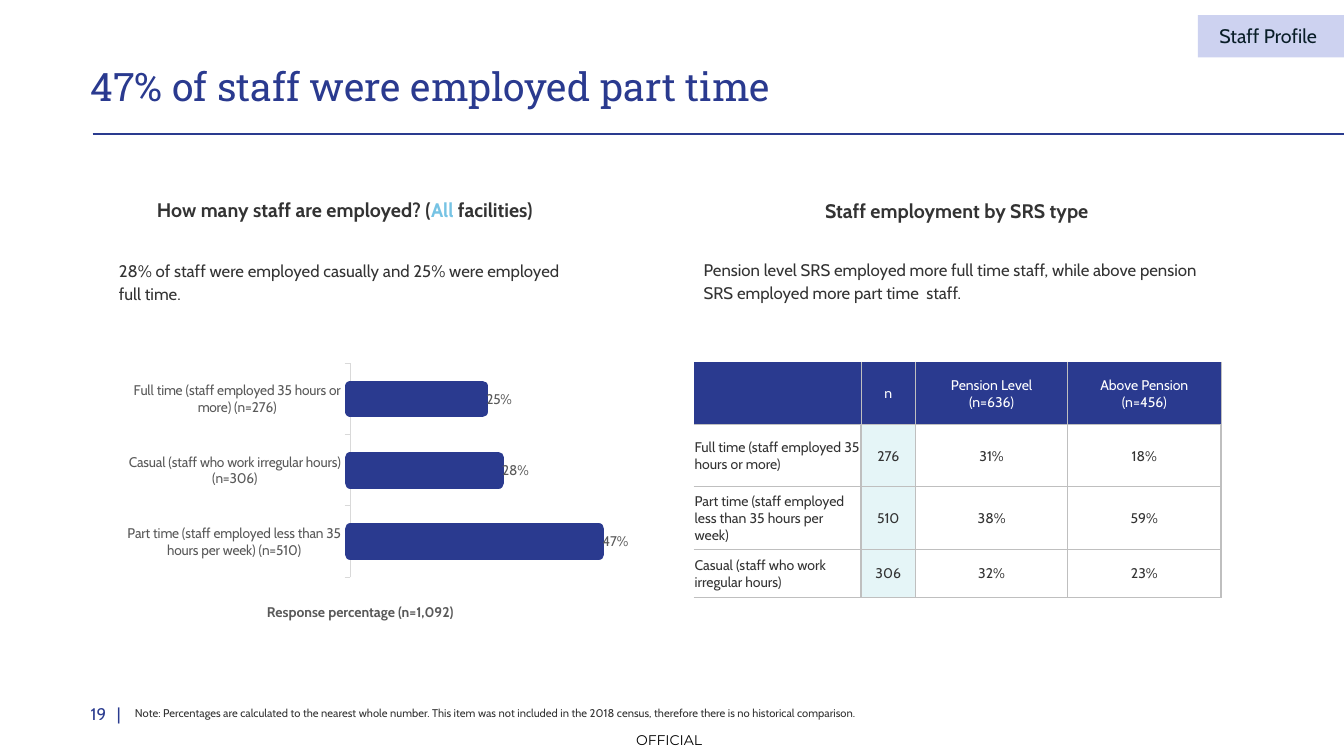
import lxml.etree
import pptx
import pptx.chart.data
import pptx.dml.color
import pptx.enum.chart
import pptx.enum.shapes
import pptx.enum.text
import pptx.oxml
import pptx.oxml.ns
import pptx.util
from pptx.util import Inches

RGBColor = pptx.dml.color.RGBColor
NAVY = RGBColor(0x2A, 0x3A, 0x8F)
RULE_BLUE = RGBColor(0x2A, 0x3B, 0x8F)
LAVENDER = RGBColor(0xCD, 0xD2, 0xF0)
INK = RGBColor(0x08, 0x1D, 0x27)
BLACK = RGBColor(0, 0, 0)
CHARCOAL = RGBColor(0x33, 0x33, 0x33)
GREY = RGBColor(0x59, 0x59, 0x59)
AXIS_GREY = RGBColor(0xD9, 0xD9, 0xD9)
BORDER_GREY = RGBColor(0xBF, 0xBF, 0xBF)
SKY = RGBColor(0x76, 0xC3, 0xE4)
PALE_TEAL = RGBColor(0xE5, 0xF5, 0xF7)
WHITE = RGBColor(0xFF, 0xFF, 0xFF)

LEFT = pptx.enum.text.PP_ALIGN.LEFT
CENTER = pptx.enum.text.PP_ALIGN.CENTER
RIGHT = pptx.enum.text.PP_ALIGN.RIGHT
TOP = pptx.enum.text.MSO_ANCHOR.TOP
MIDDLE = pptx.enum.text.MSO_ANCHOR.MIDDLE
BOTTOM = pptx.enum.text.MSO_ANCHOR.BOTTOM

CHART_ROWS = [
    ("Part time (staff employed less than 35 hours per week) (n=510)", 0.47),
    ("Casual (staff who work irregular hours) (n=306)", 0.28),
    ("Full time (staff employed 35 hours or more) (n=276)", 0.25),
]
TABLE_ROWS = [
    ("", "n", "Pension Level\v(n=636)", "Above Pension\n(n=456)"),
    ("Full time (staff employed 35 hours or more)", "276", "31%", "18%"),
    ("Part time (staff employed less than 35 hours per week)", "510", "38%", "59%"),
    ("Casual (staff who work irregular hours)", "306", "32%", "23%"),
]
COLUMN_WIDTHS = (1.66, 0.54, 1.51, 1.52)
ROW_HEIGHTS = (0.62, 0.62, 0.62, 0.48)


def style_font(font, size, color, name="Cabin", bold=False):
    """Set the face, size, colour and weight of a font."""
    font.name = name
    font.size = pptx.util.Pt(size)
    font.bold = bold
    font.color.rgb = color


def write_text(frame, runs, size, color, name="Cabin", bold=False, align=LEFT,
               anchor=TOP, body=False):
    """Write one paragraph; a run is a string or a (string, colour) pair."""
    frame.word_wrap = True
    frame.vertical_anchor = anchor
    paragraph = frame.paragraphs[0]
    paragraph.alignment = align
    if body:
        paragraph.line_spacing = 1.14
        paragraph.space_before = pptx.util.Pt(10)
    style_font(paragraph.font, size, color, name, bold)
    for item in runs:
        text, run_color = item if isinstance(item, tuple) else (item, None)
        run = paragraph.add_run()
        run.text = text
        if run_color is not None:
            run.font.color.rgb = run_color
    return paragraph


def add_text(slide, box, runs, size, color, **options):
    """Add a text box and return its paragraph."""
    shape = slide.shapes.add_textbox(*map(Inches, box))
    return write_text(shape.text_frame, runs, size, color, **options)


def add_block(slide, box, color):
    """Add a plain rectangle without outline or shadow."""
    shape = slide.shapes.add_shape(
        pptx.enum.shapes.MSO_SHAPE.RECTANGLE, *map(Inches, box))
    shape.shadow.inherit = False
    shape.fill.solid()
    shape.fill.fore_color.rgb = color
    shape.line.fill.background()
    return shape


def add_header(slide, left, top, width):
    """Place the title, its rule and the section tag."""
    right = left + width
    rule = slide.shapes.add_connector(
        pptx.enum.shapes.MSO_CONNECTOR.STRAIGHT,
        Inches(left + 0.12), Inches(top + 0.92), Inches(right), Inches(top + 0.92))
    rule.line.color.rgb = RULE_BLUE
    rule.line.width = pptx.util.Pt(1.5)
    lxml.etree.SubElement(rule.element.spPr, pptx.oxml.ns.qn("a:effectLst"))
    add_text(slide, (left, top, 12.13, 0.72), ["47% of staff were employed part time"],
             28, NAVY, name="Roboto Slab", anchor=BOTTOM)
    add_block(slide, (right - 1.45, top - 0.26, 1.45, 0.42), LAVENDER)
    add_text(slide, (right - 1.76, top - 0.22, 1.59, 0.34), ["Staff Profile"],
             14, INK, align=RIGHT)


def add_footer(slide, left, top):
    """Place the page number, the note and the classification."""
    number = add_text(slide, (left, top, 0.59, 0.4), ["19\t|"], 12, RULE_BLUE, anchor=MIDDLE)
    stops = pptx.oxml.parse_xml(
        f'<a:tabLst {pptx.oxml.ns.nsdecls("a")}><a:tab pos="{Inches(0.26)}" algn="l"/></a:tabLst>')
    number.font._element.addprevious(stops)
    add_text(slide, (left + 0.44, top + 0.08, 8.93, 0.37),
             ["Note: Percentages are calculated to the nearest whole number. This item was "
              "not included in the 2018 census, therefore there is no historical comparison."],
             8, CHARCOAL)
    shape = slide.shapes.add_textbox(*map(Inches, (left + 5.51, top + 0.38, 0.76, 0.17)))
    frame = shape.text_frame
    frame.margin_left = frame.margin_right = frame.margin_top = frame.margin_bottom = 0
    write_text(frame, ["OFFICIAL"], 10, BLACK, name="Montserrat")


def fix_plot_area(chart, **layout):
    """Pin the inner plot area to fractions of the chart."""
    values = "".join(f'<c:{key} val="{value}"/>' for key, value in layout.items())
    area = chart._chartSpace.chart.plotArea
    for old in area.findall(pptx.oxml.ns.qn("c:layout")):
        area.remove(old)
    area.insert(0, pptx.oxml.parse_xml(
        f'<c:layout {pptx.oxml.ns.nsdecls("c")}><c:manualLayout><c:layoutTarget val="inner"/>'
        f'<c:xMode val="edge"/><c:yMode val="edge"/>{values}</c:manualLayout></c:layout>'))


def add_employment_chart(slide, left, top, width, height):
    """Place the bar chart of employment types and its axis caption."""
    data = pptx.chart.data.CategoryChartData(number_format="0%")
    data.categories = [label for label, _ in CHART_ROWS]
    data.add_series("Series 1", [value for _, value in CHART_ROWS])
    chart = slide.shapes.add_chart(
        pptx.enum.chart.XL_CHART_TYPE.BAR_CLUSTERED,
        *map(Inches, (left, top, width, height)), data).chart
    chart.has_legend = False
    chart.has_title = False
    style_font(chart.font, 10, BLACK)
    fix_plot_area(chart, x=0.471, y=0.087, w=0.529, h=0.827)

    categories = chart.category_axis
    categories.major_tick_mark = pptx.enum.chart.XL_TICK_MARK.OUTSIDE
    categories.format.line.color.rgb = AXIS_GREY
    categories.format.line.width = pptx.util.Pt(0.75)
    style_font(categories.tick_labels.font, 10, GREY)
    values = chart.value_axis
    values.minimum_scale, values.maximum_scale = 0, 0.5
    values.has_major_gridlines = False
    values.visible = False

    plot = chart.plots[0]
    plot.gap_width = 182
    plot.vary_by_categories = False
    bars = plot.series[0].format
    bars.fill.solid()
    bars.fill.fore_color.rgb = NAVY
    bars.line.color.rgb = NAVY
    bars.line.width = pptx.util.Pt(8.25)
    lxml.etree.SubElement(bars.line._ln, pptx.oxml.ns.qn("a:round"))
    plot.has_data_labels = True
    labels = plot.data_labels
    labels.show_value = True
    labels.number_format, labels.number_format_is_linked = "0%", False
    labels.position = pptx.enum.chart.XL_LABEL_POSITION.OUTSIDE_END
    style_font(labels.font, 10, GREY)

    caption = add_block(slide, (left + 1.41, top + 2.53, 2.87, 0.22), WHITE)
    write_text(caption.text_frame, ["Response percentage (n=1,092)"], 10, GREY,
               bold=True, body=True)


def set_border(cell, side, width):
    """Draw one cell edge, or clear it when the width is zero."""
    paint = (f'<a:solidFill><a:srgbClr val="{BORDER_GREY}"/></a:solidFill>'
             if width else "<a:noFill/>")
    cell._tc.get_or_add_tcPr().append(pptx.oxml.parse_xml(
        f'<a:ln{side} {pptx.oxml.ns.nsdecls("a")} w="{pptx.util.Pt(width)}">{paint}</a:ln{side}>'))


def add_type_table(slide, left, top):
    """Place the table of employment by SRS type."""
    table = slide.shapes.add_table(
        len(ROW_HEIGHTS), len(COLUMN_WIDTHS), Inches(left), Inches(top),
        Inches(sum(COLUMN_WIDTHS)), Inches(sum(ROW_HEIGHTS))).table
    table.first_row = table.horz_banding = False
    for column, width in zip(table.columns, COLUMN_WIDTHS):
        column.width = Inches(width)
    for row_index, texts in enumerate(TABLE_ROWS):
        table.rows[row_index].height = Inches(ROW_HEIGHTS[row_index])
        is_header = row_index == 0
        line = 0.5 if is_header else 1
        for column_index, text in enumerate(texts):
            cell = table.cell(row_index, column_index)
            set_border(cell, "L", line if column_index else 0)
            set_border(cell, "R", line)
            set_border(cell, "T", (0, 0.5, 1, 1)[row_index])
            set_border(cell, "B", line)
            cell.fill.solid()
            cell.fill.fore_color.rgb = (
                NAVY if is_header else PALE_TEAL if column_index == 1 else WHITE)
            cell.margin_left = cell.margin_right = cell.margin_top = Inches(0.01)
            cell.margin_bottom = 0
            cell.vertical_anchor = MIDDLE
            cell.text = text
            for paragraph in cell.text_frame.paragraphs:
                paragraph.alignment = CENTER if column_index else LEFT
                style_font(paragraph.font, 10, WHITE if is_header else CHARCOAL)


def add_all_facilities(slide, left, top):
    """Place the left column about all facilities."""
    add_text(slide, (left, top, 4.56, 0.41),
             ["How many staff are employed? (", ("All", SKY), " facilities)"],
             14, CHARCOAL, bold=True, align=CENTER, body=True)
    add_text(slide, (left - 0.06, top + 0.63, 4.75, 0.87),
             ["28% of staff were employed casually and 25% were employed full time."],
             12, CHARCOAL, body=True)
    add_employment_chart(slide, left, top + 1.5, 5.09, 2.57)


def add_by_type(slide, left, top):
    """Place the right column about SRS types."""
    add_text(slide, (left, top, 5.22, 0.41), ["Staff employment by SRS type"],
             14, CHARCOAL, bold=True, align=CENTER, body=True)
    add_text(slide, (left, top + 0.61, 5.22, 0.58),
             ["Pension level SRS employed more full time staff, while above pension SRS "
              "employed more part time  staff."], 12, CHARCOAL, body=True)
    add_type_table(slide, left, top + 1.7)


def main():
    """Build the staff profile slide."""
    presentation = pptx.Presentation()
    presentation.slide_width, presentation.slide_height = Inches(13.33), Inches(7.5)
    slide = presentation.slides.add_slide(presentation.slide_layouts[6])
    add_header(slide, 0.8, 0.41, 12.53)
    add_all_facilities(slide, 1.14, 1.88)
    add_by_type(slide, 6.88, 1.89)
    add_footer(slide, 0.8, 6.88)
    presentation.save("out.pptx")


if __name__ == "__main__":
    main()
